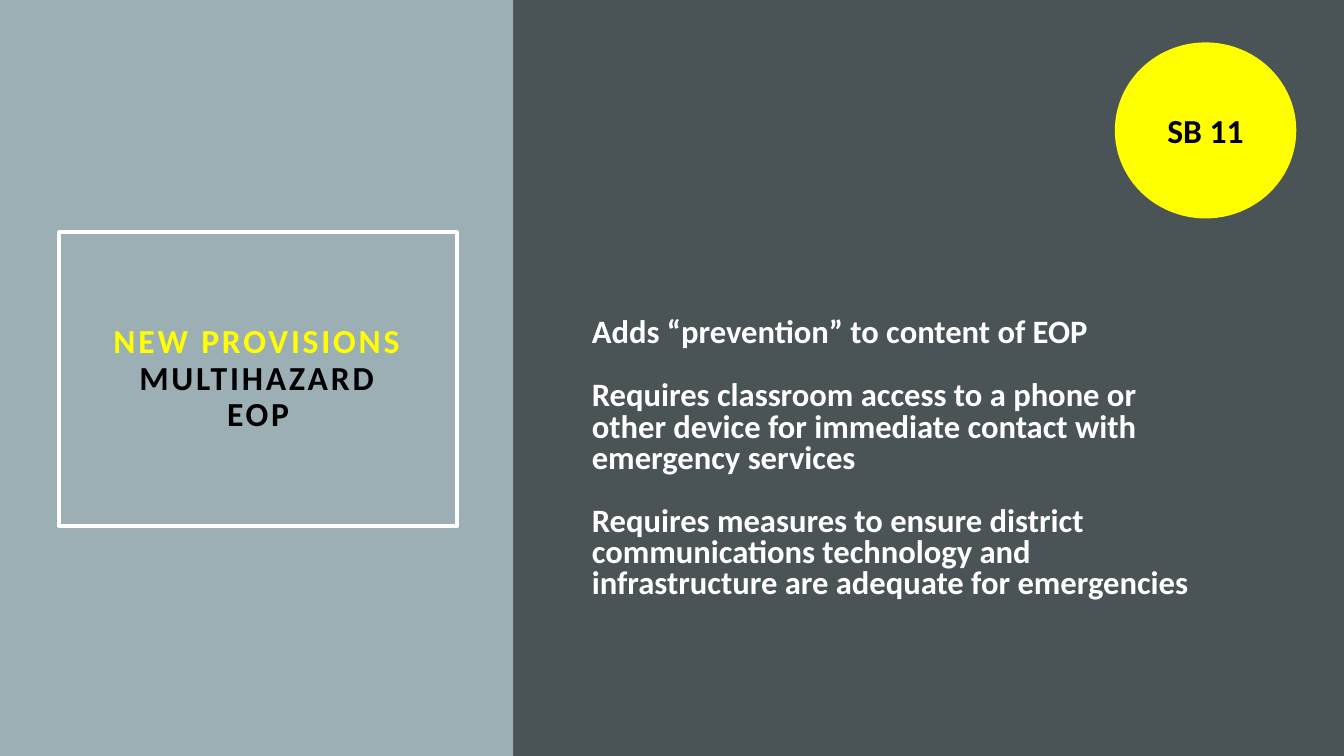
from copy import deepcopy
from dataclasses import dataclass

from pptx import Presentation
from pptx.dml.color import RGBColor
from pptx.enum.shapes import MSO_SHAPE as Shape
from pptx.enum.text import MSO_ANCHOR as Anchor, MSO_AUTO_SIZE as AutoSize, PP_ALIGN as Align
from pptx.oxml.ns import qn
from pptx.util import Inches, Pt

WIDTH, HEIGHT = Inches(13.33), Inches(7.5)
SPLIT = 0.382
COLORS = {
    "mist": "9BAFB5",
    "slate": "4A5356",
    "yellow": "FFFF00",
    "white": "FFFFFF",
    "black": "000000",
}
PROVISIONS = (
    "Adds “prevention” to content of EOP",
    "Requires classroom access to a phone or other device for immediate contact with emergency services",
    "Requires measures to ensure district communications technology and infrastructure are adequate for emergencies",
)
TITLE_LINES = (("NEW PROVISIONS", "yellow"), ("MULTIHAZARD", "black"), ("EOP", "black"))


@dataclass(frozen=True)
class Area:
    left: float
    top: float
    width: float
    height: float

    def format(self) -> dict:
        return {
            "left": int(self.left * WIDTH),
            "top": int(self.top * HEIGHT),
            "width": int(self.width * WIDTH),
            "height": int(self.height * HEIGHT),
        }


@dataclass(frozen=True)
class Block:
    kind: Shape
    area: Area
    color: str


TITLE_AREA = Area(0.044, 0.307, 0.296, 0.389)
BODY_AREA = Area(0.433, 0.357, 0.479, 0.503)
PANELS = (
    Block(Shape.RECTANGLE, Area(0, 0, SPLIT, 1), "mist"),
    Block(Shape.RECTANGLE, Area(SPLIT, 0, 1 - SPLIT, 1), "slate"),
)
BADGE = Block(Shape.OVAL, Area(0.83, 0.057, 0.134, 0.231), "yellow")


def apply(target, values: dict) -> None:
    for name, value in values.items():
        setattr(target, name, value)


def rgb(color: str) -> RGBColor:
    return RGBColor.from_string(COLORS[color])


def add_block(slide, block: Block):
    shape = slide.shapes.add_shape(block.kind, **block.area.format())
    shape.shadow.inherit = False
    shape.fill.solid()
    shape.fill.fore_color.rgb = rgb(block.color)
    shape.line.fill.background()
    return shape


def add_text(paragraph, text: str, color: str, size: float = 24):
    run = paragraph.add_run()
    run.text = text
    apply(run.font, {"name": "Calibri", "size": Pt(size), "bold": True})
    run.font.color.rgb = rgb(color)
    return run


def format_frame(frame, **values) -> None:
    apply(frame, {
        "word_wrap": True,
        "auto_size": AutoSize.NONE,
        "vertical_anchor": Anchor.MIDDLE,
        **values,
    })


def fill_title(slide) -> None:
    title = slide.shapes.title
    slide.shapes.element.append(title.element)
    apply(title, TITLE_AREA.format())
    title.line.color.rgb = rgb("white")
    title.line.width = Pt(2.5)
    sides = ("left", "top", "right", "bottom")
    format_frame(title.text_frame, **{f"margin_{side}": Inches(0.2) for side in sides})
    paragraph = title.text_frame.paragraphs[0]
    apply(paragraph, {"alignment": Align.CENTER, "line_spacing": 0.9})
    for index, (text, color) in enumerate(TITLE_LINES):
        if index:
            paragraph.add_line_break()
        run = add_text(paragraph, text, color)
        run.font._element.set("spc", "200")
    for line_break in paragraph._p.findall(qn("a:br")):
        line_break.append(deepcopy(run.font._element))


def add_provisions(slide) -> None:
    frame = slide.shapes.add_textbox(**BODY_AREA.format()).text_frame
    format_frame(frame)
    for index, text in enumerate(PROVISIONS):
        paragraph = frame.add_paragraph() if index else frame.paragraphs[0]
        apply(paragraph, {"line_spacing": 0.8, "space_before": Pt(22.5 if index else 0)})
        add_text(paragraph, text, "white", 23.3)


def add_badge(slide) -> None:
    badge = add_block(slide, BADGE)
    badge.line.color.rgb = rgb(BADGE.color)
    badge.line.width = Pt(1)
    format_frame(badge.text_frame)
    paragraph = badge.text_frame.paragraphs[0]
    paragraph.alignment = Align.CENTER
    add_text(paragraph, "SB 11", "black")


def main() -> None:
    presentation = Presentation()
    apply(presentation, {"slide_width": WIDTH, "slide_height": HEIGHT})
    slide = presentation.slides.add_slide(presentation.slide_layouts[5])
    slide.background.fill.solid()
    slide.background.fill.fore_color.rgb = rgb("slate")
    for panel in PANELS:
        add_block(slide, panel)
    fill_title(slide)
    add_provisions(slide)
    add_badge(slide)
    presentation.save("out.pptx")


if __name__ == "__main__":
    main()
